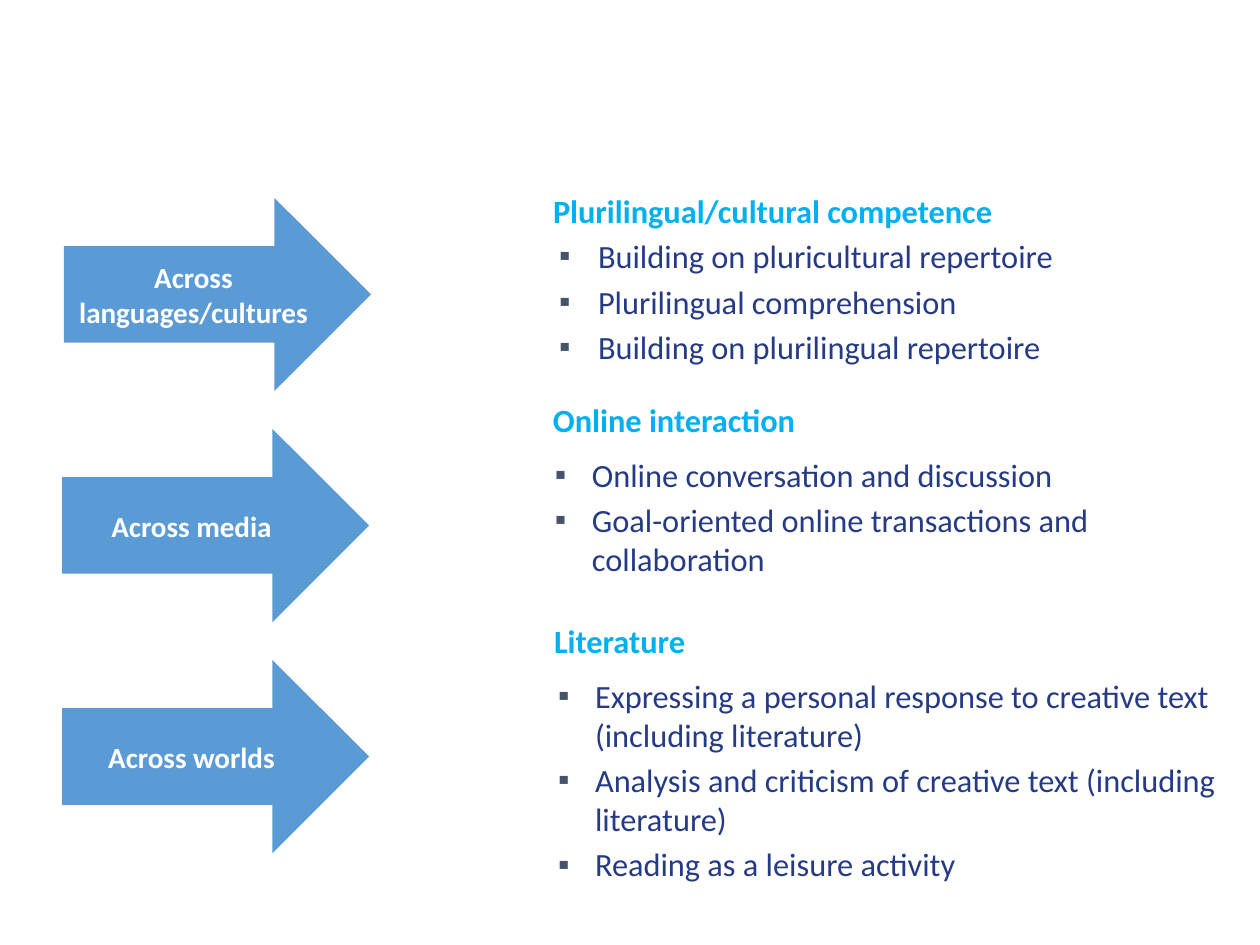
from lxml.etree import SubElement
from pptx import Presentation
from pptx.dml.color import RGBColor
from pptx.enum.shapes import MSO_SHAPE as SHAPE
from pptx.enum.text import MSO_ANCHOR as ANCHOR, MSO_AUTO_SIZE as AUTO, PP_ALIGN as ALIGN
from pptx.oxml.ns import qn
from pptx.util import Emu, Pt

COLORS = {"arrow": "5B9BD5", "white": "FFFFFF", "heading": "00B0F0",
          "body": "263B86", "bullet": "44546A"}
FONT = "Calibri"
PX_PER_INCH = 126


def px(n):
    return Emu(round(n * 914400 / PX_PER_INCH))


class SlideBuilder:
    def __init__(self, slide):
        self.slide = slide

    def style(self, p, size, color, bold):
        for r in p.runs:
            r.font.name, r.font.size, r.font.bold = FONT, Pt(size), bold
            r.font.color.rgb = RGBColor.from_string(COLORS[color])

    def indent(self, p, left, hang=0, bullet=None):
        pPr = p._p.get_or_add_pPr()
        pPr.set("marL", str(px(left)))
        pPr.set("indent", str(-px(hang)))
        if bullet:
            clr = SubElement(pPr, qn("a:buClr"))
            SubElement(clr, qn("a:srgbClr"), val=COLORS["bullet"])
            SubElement(pPr, qn("a:buChar"), char=bullet)
        else:
            SubElement(pPr, qn("a:buNone"))

    def arrow(self, text, x, y, w, h):
        sp = self.slide.shapes.add_shape(SHAPE.RIGHT_ARROW, px(x), px(y), px(w), px(h))
        sp.shadow.inherit = False
        sp.fill.solid()
        sp.fill.fore_color.rgb = RGBColor.from_string(COLORS["arrow"])
        sp.line.fill.background()
        tf = sp.text_frame
        tf.text, tf.word_wrap, tf.vertical_anchor = text, True, ANCHOR.MIDDLE
        p = tf.paragraphs[0]
        p.alignment = ALIGN.CENTER
        self.style(p, 16.6, "white", True)

    def bullet_list(self, idx, box, insets, heading, items, heading_left,
                    item_left, hang, gap):
        sp = next(s for s in self.slide.placeholders if s.placeholder_format.idx == idx)
        sp.left, sp.top, sp.width, sp.height = map(px, box)
        tf = sp.text_frame
        tf.word_wrap, tf.auto_size, tf.vertical_anchor = True, AUTO.NONE, ANCHOR.TOP
        tf.margin_left = tf.margin_right = px(insets[0])
        tf.margin_top = tf.margin_bottom = px(insets[1])

        p = tf.paragraphs[0]
        p.text = heading
        self.indent(p, heading_left)
        p.space_before, p.space_after = Pt(0), Pt(gap)
        self.style(p, 18.5, "heading", True)
        for item in items:
            p = tf.add_paragraph()
            p.text = item
            self.indent(p, item_left, hang, "▪")
            self.style(p, 18.5, "body", False)

    def remove_empty_placeholders(self):
        for sp in list(self.slide.placeholders):
            if not sp.text_frame.text:
                sp._element.getparent().remove(sp._element)


def main():
    prs = Presentation()
    prs.slide_width, prs.slide_height = px(1260), px(945)
    # The comparison layout offers several body placeholders
    s = SlideBuilder(prs.slides.add_slide(prs.slide_layouts[4]))

    # Arrows on the left
    arrows = [("Across languages/cultures", 64), ("Across media", 62), ("Across worlds", 62)]
    for i, (text, x) in enumerate(arrows):
        s.arrow(text, x, 198 + i * 231, 307, 193)

    # Lists of scales on the right
    s.bullet_list(1, (483, 185, 684, 200), (13, 6), "Plurilingual/cultural competence",
                  ["Building on pluricultural repertoire",
                   "Plurilingual comprehension",
                   "Building on plurilingual repertoire"],
                  heading_left=57, item_left=102, hang=39, gap=0)
    s.bullet_list(2, (544, 391, 605, 202), (9, 9), "Online interaction",
                  ["Online conversation and discussion",
                   "Goal-oriented online transactions and collaboration"],
                  heading_left=0, item_left=39, hang=37, gap=5.5)
    s.bullet_list(3, (432, 615, 828, 282), (13, 6), "Literature",
                  ["Expressing a personal response to creative text (including literature)",
                   "Analysis and criticism of creative text (including literature)",
                   "Reading as a leisure activity"],
                  heading_left=109, item_left=150, hang=37, gap=5.5)

    s.remove_empty_placeholders()
    prs.save("out.pptx")


if __name__ == "__main__":
    main()
